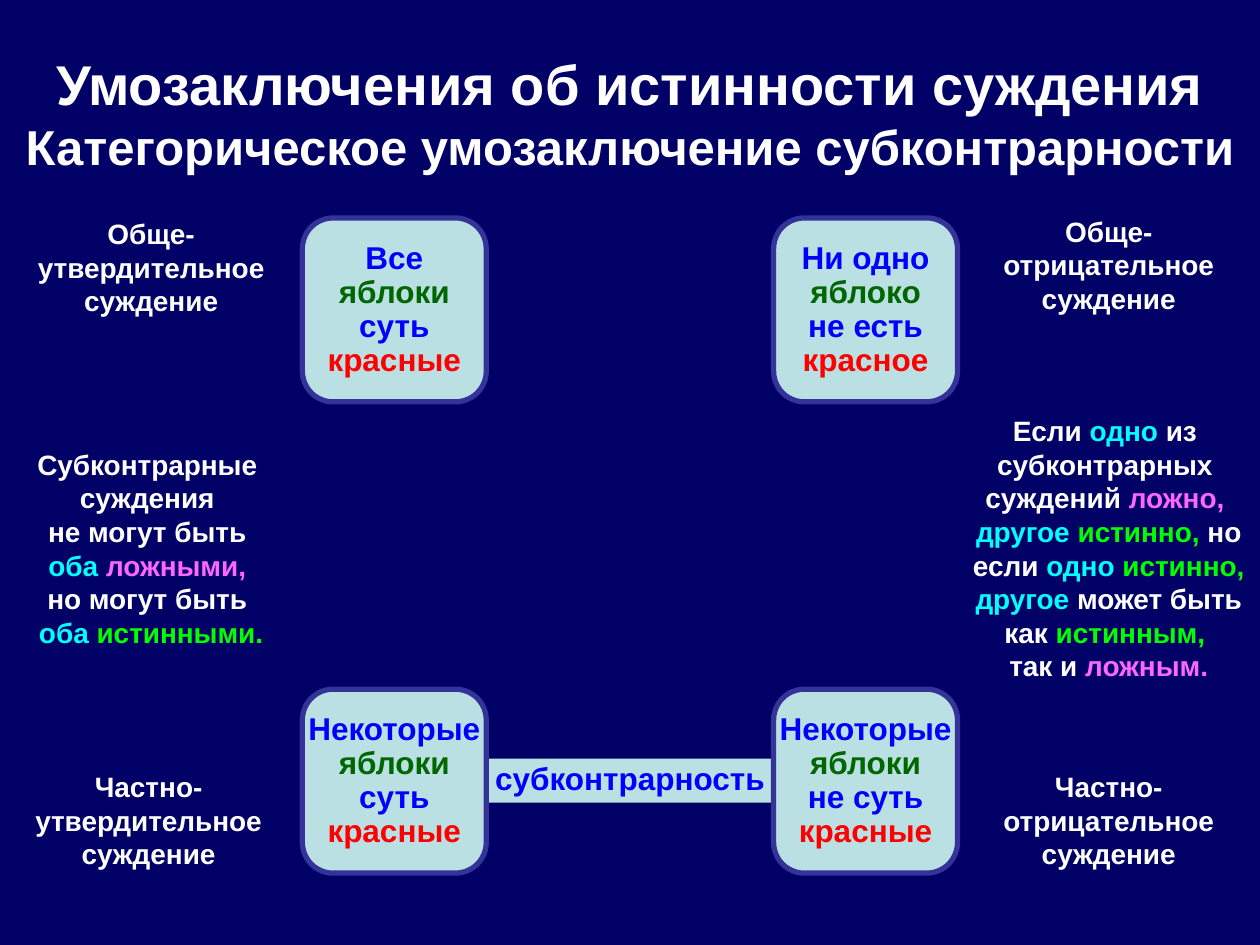
from copy import deepcopy
from pptx import Presentation
from pptx.dml.color import RGBColor as Rgb
from pptx.enum.shapes import MSO_SHAPE as Kind
from pptx.enum.text import MSO_ANCHOR as Anchor, MSO_AUTO_SIZE as Fit, PP_ALIGN as Align
from pptx.util import Inches, Pt

WIDE, HIGH = 10, 7.5
SIDE = 1.46
COLS = (0.24 * WIDE, 0.76 * WIDE - SIDE)
ROWS = (1.73, 5.47)
HUES = {"back": "000066", "pale": "BBE0E3", "edge": "333399", "white": "FFFFFF",
        "blue": "0000FF", "leaf": "006600", "red": "FF0000", "cyan": "00FFFF",
        "pink": "FF66FF", "lime": "00FF00"}
SUBJECTS = (
    (("Все", "яблоки", "суть", "красные"), ("Ни одно", "яблоко", "не есть", "красное")),
    (("Некоторые", "яблоки", "суть", "красные"), ("Некоторые", "яблоки", "не суть", "красные")),
)
LABELS = (
    ("Обще-\nутвердительное\nсуждение", (0, 1.65, 2.4, 0.94), Anchor.MIDDLE),
    ("Обще-\nотрицательное\nсуждение", (7.6, 1.65, 2.4, 0.94), Anchor.TOP),
    ("Частно-\nутвердительное\nсуждение", (0, 6.06, 2.36, 0.94), Anchor.TOP),
    ("Частно-\nотрицательное\nсуждение", (7.6, 6.06, 2.4, 0.94), Anchor.TOP),
)
RULES = (
    (("white", "Субконтрарные \nсуждения \nне могут быть \n"), ("cyan", "оба "),
     ("pink", "ложными, \n"), ("white", "но могут быть \n"), ("cyan", "оба "),
     ("lime", "истинными.")),
    (("white", "Если "), ("cyan", "одно"), ("white", " из \nсубконтрарных \nсуждений "),
     ("pink", "ложно, \n"), ("cyan", "другое "), ("lime", "истинно,"), ("white", " но если "),
     ("cyan", "одно "), ("lime", "истинно, "), ("cyan", "другое"), ("white", " может быть как "),
     ("lime", "истинным, \n"), ("white", "так и "), ("pink", "ложным.")),
)


def tint(name):
    """Return the named colour."""
    return Rgb.from_string(HUES[name])


def style(item, **form):
    """Set each format value on the item."""
    for key, value in form.items():
        setattr(item, key, value)


def write(shape, parts, anchor=Anchor.MIDDLE, wrap=False, gap=None):
    """Fill the shape with one centred paragraph of (colour, text, size) parts."""
    frame = shape.text_frame
    style(frame, auto_size=Fit.NONE, word_wrap=wrap, vertical_anchor=anchor)
    para = frame.paragraphs[0]
    style(para, alignment=Align.CENTER, line_spacing=gap)
    for hue, text, size in parts:
        for order, line in enumerate(text.split("\n")):
            if order:
                para.add_line_break()
                para._p[-1].append(deepcopy(run._r.rPr))
            if line:
                run = para.add_run()
                run.text = line
                style(run.font, name="Arial", size=Pt(size), bold=True)
                run.font.color.rgb = tint(hue)


def block(slide, kind, box):
    """Add a pale shape without outline or shadow."""
    shape = slide.shapes.add_shape(kind, *map(Inches, box))
    shape.shadow.inherit = False
    shape.fill.solid()
    shape.fill.fore_color.rgb = tint("pale")
    shape.line.fill.background()
    return shape


def head(slide, box):
    """Place the two-line title."""
    title = slide.shapes.title
    style(title, **dict(zip(("left", "top", "width", "height"), map(Inches, box))))
    write(title, (("white", "Умозаключения об истинности суждения\n", 32),
                  ("white", "Категорическое умозаключение субконтрарности", 28)), wrap=True)


def band(slide, box):
    """Draw the relation that joins the lower two judgements."""
    shape = block(slide, Kind.RECTANGLE, box)
    style(shape.text_frame, margin_top=0)
    write(shape, [("blue", "субконтрарность", 18)])


def card(slide, words, box):
    """Draw one judgement with a colour for each of its terms."""
    shape = block(slide, Kind.ROUNDED_RECTANGLE, box)
    shape.line.color.rgb = tint("edge")
    shape.line.width = Pt(3)
    text = [word + "\n" for word in words[:-1]] + [words[-1]]
    write(shape, [(hue, word, 18) for hue, word in zip(("blue", "leaf", "blue", "red"), text)],
          gap=0.9)


def note(slide, parts, box, **form):
    """Place a text of coloured parts."""
    shape = slide.shapes.add_textbox(*map(Inches, box))
    write(shape, [(hue, text, 16) for hue, text in parts], **form)


def main():
    """Build the slide and save it."""
    deck = Presentation()
    deck.slide_width, deck.slide_height = Inches(WIDE), Inches(HIGH)
    slide = deck.slides.add_slide(deck.slide_layouts[5])
    slide.background.fill.solid()
    slide.background.fill.fore_color.rgb = tint("back")
    head(slide, (0, 0.04 * HIGH, WIDE, 1.18))
    start = COLS[0] + SIDE - 0.24
    band(slide, (start, 6.02, WIDE - 2 * start, 0.35))
    for text, box, anchor in LABELS:
        note(slide, [("white", text)], box, anchor=anchor)
    for top, line in zip(ROWS, SUBJECTS):
        for left, words in zip(COLS, line):
            card(slide, words, (left, top, SIDE, SIDE))
    for left, parts in zip((0, COLS[1] + SIDE), RULES):
        note(slide, parts, (left, ROWS[0] + SIDE, COLS[0], 2.32), wrap=True)
    deck.save("out.pptx")


if __name__ == "__main__":
    main()
